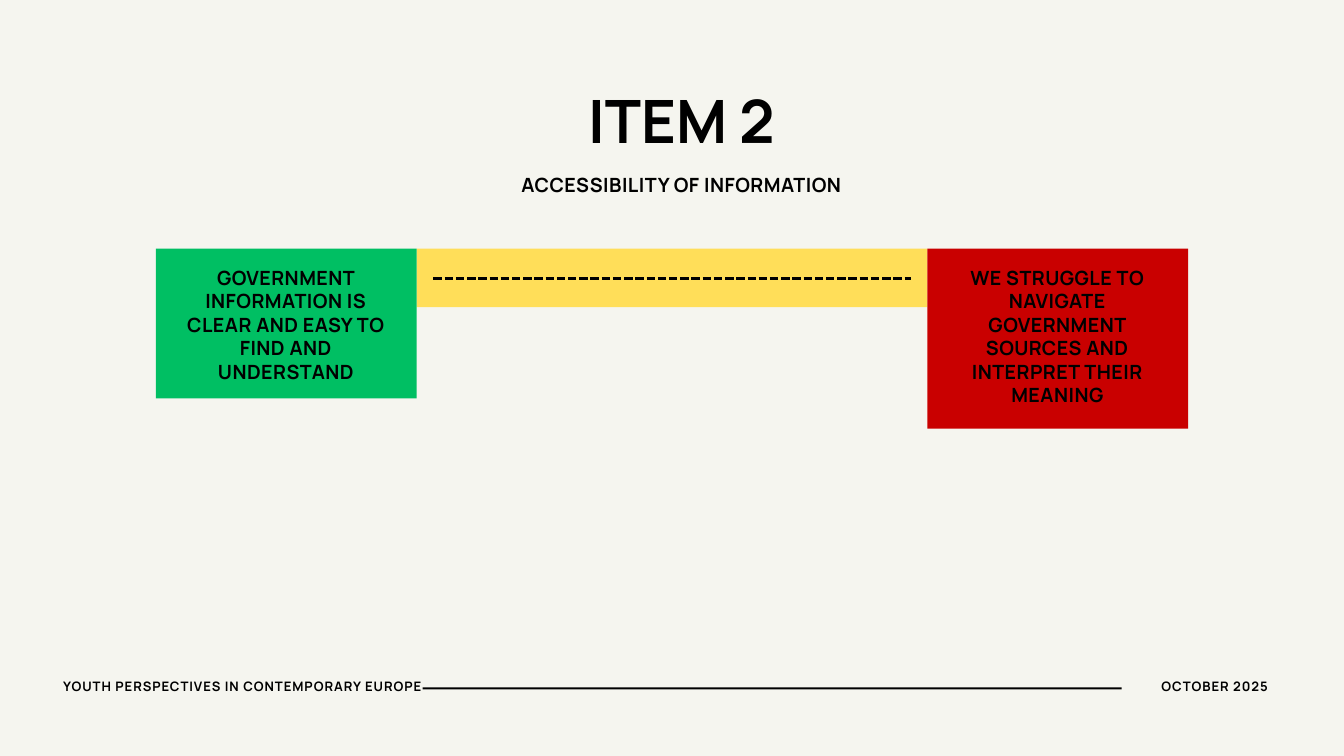
from lxml.etree import SubElement
from pptx import Presentation
from pptx.dml.color import RGBColor
from pptx.enum.dml import MSO_LINE
from pptx.enum.shapes import MSO_CONNECTOR, MSO_SHAPE
from pptx.enum.text import MSO_AUTO_SIZE, PP_ALIGN
from pptx.oxml.ns import qn
from pptx.util import Emu, Pt

EMU_PER_PX = 9144  # 100 px to the inch
BLACK = "000000"


def px(length):
    return Emu(length * EMU_PER_PX)


def color(hex_string):
    return RGBColor.from_string(hex_string)


class SlideBuilder:
    font_name = "Manrope"
    line_height = 1.2

    def __init__(self, slide, background):
        self.slide = slide
        slide.background.fill.solid()
        slide.background.fill.fore_color.rgb = color(background)

    def block(self, left, top, width, height, fill):
        """Add a filled rectangle without an outline."""
        shape = self.slide.shapes.add_shape(
            MSO_SHAPE.RECTANGLE, px(left), px(top), px(width), px(height))
        shape.shadow.inherit = False
        shape.fill.solid()
        shape.fill.fore_color.rgb = color(fill)
        shape.line.fill.background()

    def text(self, content, left, top, width, height, size=21, spacing=0.5,
             align=PP_ALIGN.CENTER):
        """Add bold text; size and letter spacing are in points."""
        text_box = self.slide.shapes.add_textbox(
            px(left), px(top), px(width), px(height))
        text_frame = text_box.text_frame
        text_frame.margin_left = text_frame.margin_right = 0
        text_frame.margin_top = text_frame.margin_bottom = 0
        text_frame.word_wrap = True
        text_frame.auto_size = MSO_AUTO_SIZE.SHAPE_TO_FIT_TEXT
        text_frame.text = content
        paragraph = text_frame.paragraphs[0]
        paragraph.alignment = align
        paragraph.line_spacing = Pt(size * self.line_height)
        run = paragraph.runs[0]
        run.font.name = self.font_name
        run.font.size = Pt(size)
        run.font.bold = True
        run.font.color.rgb = color(BLACK)
        if spacing:
            run._r.get_or_add_rPr().set("spc", str(round(spacing * 100)))

    def dashed_line(self, left, right, y, width):
        connector = self.slide.shapes.add_connector(
            MSO_CONNECTOR.STRAIGHT, px(left), px(y), px(right), px(y))
        connector.line.color.rgb = color(BLACK)
        connector.line.width = Pt(width)
        connector.line.dash_style = MSO_LINE.SQUARE_DOT
        SubElement(connector._element.spPr, qn("a:effectLst"))


def main():
    presentation = Presentation()
    presentation.slide_width = px(2000)
    presentation.slide_height = px(1125)
    slide = presentation.slides.add_slide(presentation.slide_layouts[6])
    builder = SlideBuilder(slide, "F5F5EF")

    builder.text("ITEM 2", 244, 124, 1540, 109, size=64, spacing=0)
    builder.text("ACCESSIBILITY OF INFORMATION", 597, 257, 834, 36)

    # The scale: two opposite statements joined by a neutral band
    scale_left, scale_top, end_width, band_width = 232, 370, 388, 760
    band_left = scale_left + end_width
    band_right = band_left + band_width
    builder.block(band_left, scale_top, band_width, 87, "FFDE59")
    ends = [
        (scale_left, 223, "00BF63",
         "GOVERNMENT INFORMATION IS CLEAR AND EASY TO FIND AND UNDERSTAND"),
        (band_right, 268, "C90000",
         "WE STRUGGLE TO NAVIGATE GOVERNMENT SOURCES AND INTERPRET THEIR MEANING"),
    ]
    for left, height, fill, statement in ends:
        builder.block(left, scale_top, end_width, height, fill)
        builder.text(statement, left + 30, scale_top + 25, end_width - 61, height - 25)
    builder.dashed_line(band_left + 25, band_right - 25, 415, width=3)

    # Footer
    builder.block(629, 1023, 1040, 3, BLACK)
    builder.text("OCTOBER 2025", 1681, 1010, 206, 25,
                 size=14, spacing=1, align=PP_ALIGN.RIGHT)
    builder.text("YOUTH PERSPECTIVES IN CONTEMPORARY EUROPE", 94, 1010, 538, 25,
                 size=14, spacing=1, align=PP_ALIGN.LEFT)

    presentation.save("out.pptx")


if __name__ == "__main__":
    main()
